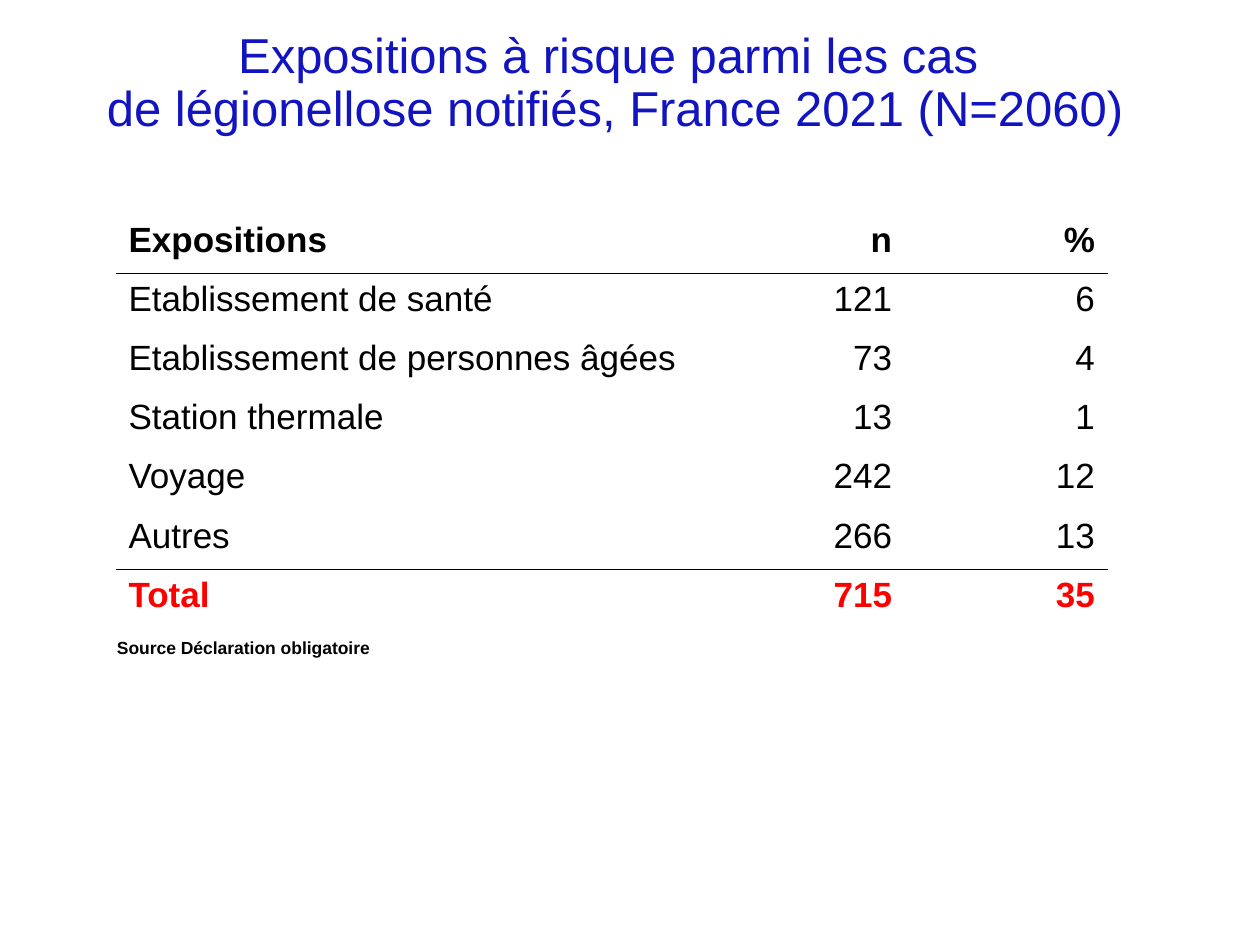
from dataclasses import dataclass

from lxml.etree import SubElement
from pptx import Presentation
from pptx.dml.color import RGBColor
from pptx.enum.text import MSO_ANCHOR, PP_ALIGN
from pptx.oxml.ns import qn
from pptx.util import Inches, Pt

COLORS = {"white": "FFFFFF", "black": "000000", "blue": "1114BF", "red": "FF0000"}


@dataclass
class Row:
    cells: tuple[str, str, str]
    bold: bool = False
    color: str = "black"
    top: bool = False
    base: bool = False


ROWS = [
    Row(("Expositions", "n", "%"), bold=True, base=True),
    Row(("Etablissement de santé", "121", "6"), top=True),
    Row(("Etablissement de personnes âgées", "73", "4")),
    Row(("Station thermale", "13", "1")),
    Row(("Voyage", "242", "12")),
    Row(("Autres", "266", "13"), base=True),
    Row(("Total", "715", "35"), bold=True, color="red", top=True),
]
WIDTHS = (4.83, 1.43, 1.61)
HEIGHT = 0.47


def write(frame, text: str, *, size: float, color: str = "black",
          bold: bool = False, align=PP_ALIGN.LEFT, space: float = 1.0) -> None:
    frame.word_wrap = True
    for i, line in enumerate(text.split("\n")):
        para = frame.paragraphs[0] if i == 0 else frame.add_paragraph()
        para.alignment = align
        para.line_spacing = space
        run = para.add_run()
        run.text = line
        font = run.font
        font.name = "Arial"
        font.size = Pt(size)
        font.bold = bold
        font.color.rgb = RGBColor.from_string(COLORS[color])


def add_box(slide, left: float, top: float, width: float, height: float):
    return slide.shapes.add_textbox(
        Inches(left), Inches(top), Inches(width), Inches(height))


def set_edges(cell, row: Row) -> None:
    props = cell._tc.get_or_add_tcPr()
    edges = {"a:lnL": False, "a:lnR": False, "a:lnT": row.top, "a:lnB": row.base}
    for tag, shown in edges.items():
        line = SubElement(props, qn(tag), w=str(Pt(1) if shown else 0))
        if shown:
            fill = SubElement(line, qn("a:solidFill"))
            SubElement(fill, qn("a:srgbClr"), val=COLORS["black"])
        else:
            SubElement(line, qn("a:noFill"))


def add_grid(slide, left: float, top: float) -> None:
    table = slide.shapes.add_table(
        len(ROWS), len(WIDTHS), Inches(left), Inches(top),
        Inches(sum(WIDTHS)), Inches(HEIGHT * len(ROWS))).table
    table.first_row = False
    table.horz_banding = False
    for col, width in zip(table.columns, WIDTHS):
        col.width = Inches(width)
    for r, row in enumerate(ROWS):
        table.rows[r].height = Inches(HEIGHT)
        for c, text in enumerate(row.cells):
            cell = table.cell(r, c)
            set_edges(cell, row)
            cell.fill.background()
            write(cell.text_frame, text, size=20, color=row.color, bold=row.bold,
                  align=PP_ALIGN.RIGHT if c else PP_ALIGN.LEFT)


def main() -> None:
    deck = Presentation()
    deck.slide_width, deck.slide_height = Inches(10), Inches(7.5)
    slide = deck.slides.add_slide(deck.slide_layouts[6])

    title = add_box(slide, 0.35, 0.04, 9.06, 1.25)
    title.fill.solid()
    title.fill.fore_color.rgb = RGBColor.from_string(COLORS["white"])
    title.text_frame.vertical_anchor = MSO_ANCHOR.MIDDLE
    write(title.text_frame,
          "Expositions à risque parmi les cas \n"
          "de légionellose notifiés, France 2021 (N=2060)",
          size=28, color="blue", align=PP_ALIGN.CENTER, space=0.9)

    add_grid(slide, 0.92, 1.7)

    source = add_box(slide, 0.83, 5.01, 3.23, 0.27)
    write(source.text_frame, "Source Déclaration obligatoire", size=10, bold=True)

    deck.save("out.pptx")


if __name__ == "__main__":
    main()
